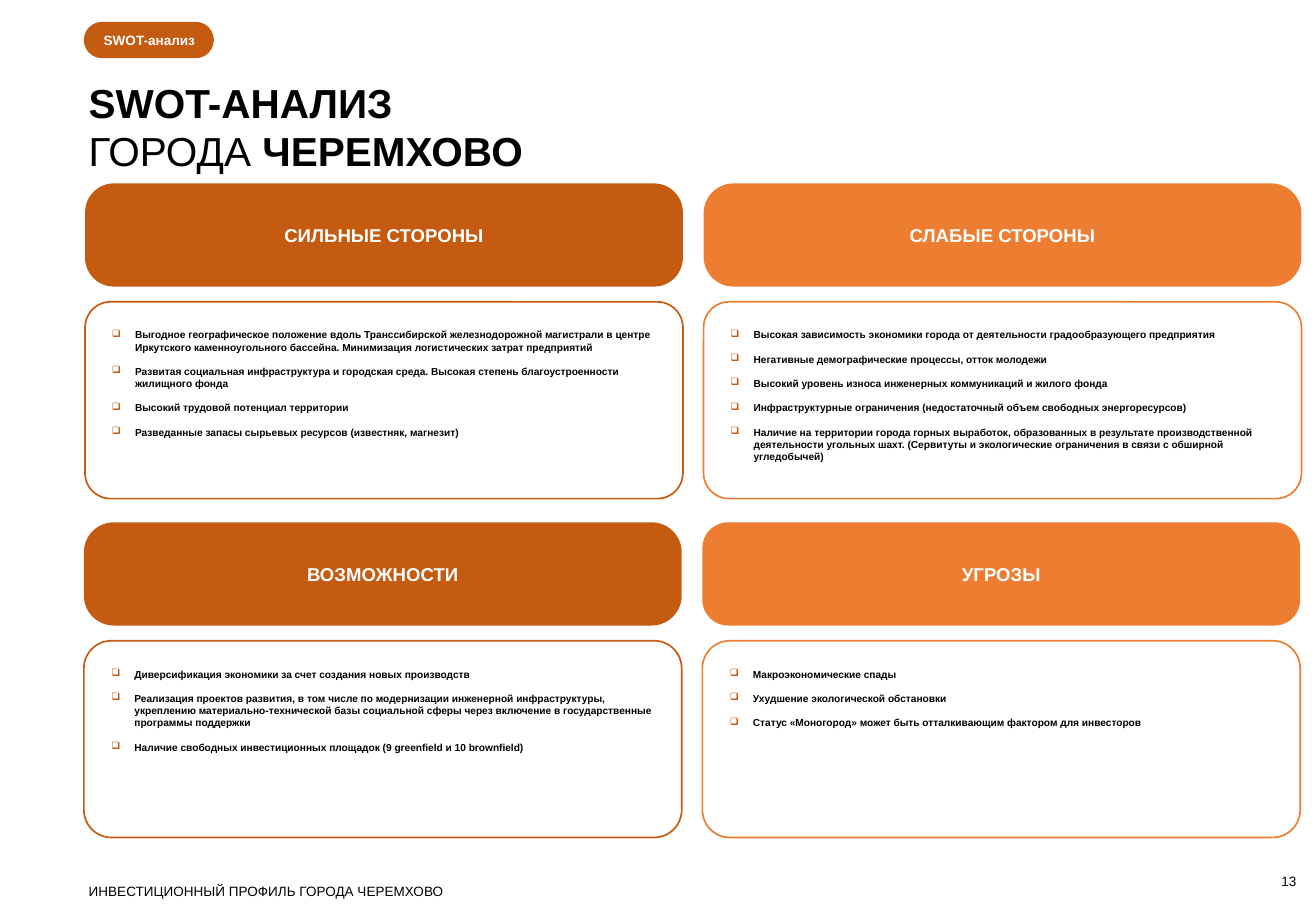
import pptx
import pptx.util
import pptx.dml.color
import pptx.enum.shapes
import pptx.enum.text
import pptx.oxml.ns
from lxml import etree

Inches = pptx.util.Inches
ANCHOR = pptx.enum.text.MSO_ANCHOR
ALIGN = pptx.enum.text.PP_ALIGN

COLORS = {"dark": "C55A11", "light": "ED7D31", "white": "FFFFFF", "black": "000000"}
FONT = "Arial"
TAG = "SWOT-анализ"
TITLE = [[("SWOT-АНАЛИЗ", True)], [("ГОРОДА ", False), ("ЧЕРЕМХОВО", True)]]
FOOTER = "ИНВЕСТИЦИОННЫЙ ПРОФИЛЬ ГОРОДА ЧЕРЕМХОВО"
PAGE_NUMBER = "13"

# heading, colour, left, header rounding, right inset, points
QUADRANTS = [
    [
        ("СИЛЬНЫЕ СТОРОНЫ", "dark", 0.7, 0.28, 0.16, [
            "Выгодное географическое положение вдоль Транссибирской железнодорожной магистрали "
            "в центре Иркутского каменноугольного бассейна. Минимизация логистических затрат предприятий",
            "Развитая социальная инфраструктура и городская среда. "
            "Высокая степень благоустроенности жилищного фонда",
            "Высокий трудовой потенциал территории",
            "Разведанные запасы сырьевых ресурсов (известняк, магнезит)",
        ]),
        ("СЛАБЫЕ СТОРОНЫ", "light", 5.79, 0.29, 0.1, [
            "Высокая зависимость экономики города от деятельности градообразующего предприятия",
            "Негативные демографические процессы, отток молодежи",
            "Высокий уровень износа инженерных коммуникаций и жилого фонда",
            "Инфраструктурные ограничения (недостаточный объем свободных энергоресурсов)",
            "Наличие на территории города горных выработок, образованных в результате производственной "
            "деятельности угольных шахт. (Сервитуты и экологические ограничения в связи с обширной "
            "угледобычей)",
        ]),
    ],
    [
        ("ВОЗМОЖНОСТИ", "dark", 0.69, 0.29, 0.16, [
            "Диверсификация экономики за счет создания новых производств",
            "Реализация проектов развития, в том числе по модернизации инженерной инфраструктуры, "
            "укреплению материально-технической базы социальной сферы через включение "
            "в государственные программы поддержки",
            "Наличие свободных инвестиционных площадок (9 greenfield и 10 brownfield)",
        ]),
        ("УГРОЗЫ", "light", 5.78, 0.25, 0.1, [
            "Макроэкономические спады",
            "Ухудшение экологической обстановки",
            "Статус «Моногород» может быть отталкивающим фактором для инвесторов",
        ]),
    ],
]
BAND_TOPS = [1.51, 4.3]
CARD_ROUNDING = [0.13, 0.14]
WIDTH, HEADER_HEIGHT, CARD_HEIGHT, CARD_OFFSET = 4.92, 0.85, 1.62, 0.975
SMALL_INSETS = (0.04, 0.04, 0.04, 0.04)
HANGING = 0.19


def color(name):
    return pptx.dml.color.RGBColor.from_string(COLORS[name])


def set_frame(shape, insets, anchor):
    frame = shape.text_frame
    frame.word_wrap = True
    frame.auto_size = pptx.enum.text.MSO_AUTO_SIZE.NONE
    frame.vertical_anchor = anchor
    (frame.margin_left, frame.margin_top,
     frame.margin_right, frame.margin_bottom) = map(Inches, insets)
    return frame


def add_span(para, text, size, color_name="black", bold=False):
    span = para.add_run()
    span.text = text
    span.font.name = FONT
    span.font.size = pptx.util.Pt(size)
    span.font.bold = bold
    span.font.color.rgb = color(color_name)


def add_rounded(page, place, rounding, fill=None, line=None):
    shape = page.shapes.add_shape(
        pptx.enum.shapes.MSO_SHAPE.ROUNDED_RECTANGLE, *map(Inches, place))
    shape.adjustments[0] = rounding
    shape.shadow.inherit = False
    if fill:
        shape.fill.solid()
        shape.fill.fore_color.rgb = color(fill)
    else:
        shape.fill.background()
    if line:
        shape.line.color.rgb = color(line)
        shape.line.width = pptx.util.Pt(1)
    else:
        shape.line.fill.background()
    return shape


def add_bullet(para):
    properties = para._p.get_or_add_pPr()
    properties.set("marL", str(Inches(HANGING)))
    properties.set("indent", str(-Inches(HANGING)))
    qn = pptx.oxml.ns.qn
    bullet_color = etree.SubElement(properties, qn("a:buClr"))
    etree.SubElement(bullet_color, qn("a:srgbClr"), val=COLORS["dark"])
    etree.SubElement(properties, qn("a:buChar"), char="❑")


def add_header(page, place, rounding, fill, heading):
    header = add_rounded(page, place, rounding, fill=fill)
    frame = set_frame(header, (0.1, 0.05, 0.1, 0.05), ANCHOR.MIDDLE)
    para = frame.paragraphs[0]
    para.alignment = ALIGN.CENTER
    add_span(para, heading, 11, "white", True)


def add_card(page, place, rounding, line, right_inset, points):
    card = add_rounded(page, place, rounding, line=line)
    frame = set_frame(card, (0.16, 0.16, right_inset, 0.05), ANCHOR.TOP)
    for index, point in enumerate(points):
        para = frame.add_paragraph() if index else frame.paragraphs[0]
        add_bullet(para)
        para.alignment = ALIGN.LEFT
        if index:
            para.space_before = pptx.util.Pt(7.2)
        add_span(para, point, 6, bold=True)


def add_note(page, place, text, anchor, alignment):
    box = page.shapes.add_textbox(*map(Inches, place))
    para = set_frame(box, SMALL_INSETS, anchor).paragraphs[0]
    para.alignment = alignment
    add_span(para, text, 8)


def add_title(page):
    title = page.shapes.title
    title.left, title.top, title.width, title.height = map(Inches, (0.69, 0.6, 10.02, 0.85))
    frame = set_frame(title, SMALL_INSETS, ANCHOR.TOP)
    for index, spans in enumerate(TITLE):
        para = frame.add_paragraph() if index else frame.paragraphs[0]
        para.alignment = ALIGN.LEFT
        for text, bold in spans:
            add_span(para, text, 24, bold=bold)


def main():
    deck = pptx.Presentation()
    deck.slide_width, deck.slide_height = Inches(10.83), Inches(7.5)
    page = deck.slides.add_slide(deck.slide_layouts[5])
    add_title(page)

    tag = add_rounded(page, (0.69, 0.18, 1.07, 0.3), 0.5, fill="dark")
    para = set_frame(tag, (0.12, 0.04, 0.04, 0.04), ANCHOR.MIDDLE).paragraphs[0]
    para.alignment = ALIGN.LEFT
    add_span(para, TAG, 8, "white", True)

    for band, top, card_rounding in zip(QUADRANTS, BAND_TOPS, CARD_ROUNDING):
        for heading, shade, left, rounding, right_inset, points in band:
            add_header(page, (left, top, WIDTH, HEADER_HEIGHT), rounding, shade, heading)
            add_card(page, (left, top + CARD_OFFSET, WIDTH, CARD_HEIGHT),
                     card_rounding, shade, right_inset, points)

    add_note(page, (0.69, 7.23, 8, 0.13), FOOTER, ANCHOR.TOP, ALIGN.LEFT)
    add_note(page, (9.91, 7.23, 0.8, 0.13), PAGE_NUMBER, ANCHOR.BOTTOM, ALIGN.RIGHT)
    deck.save("out.pptx")


if __name__ == "__main__":
    main()
